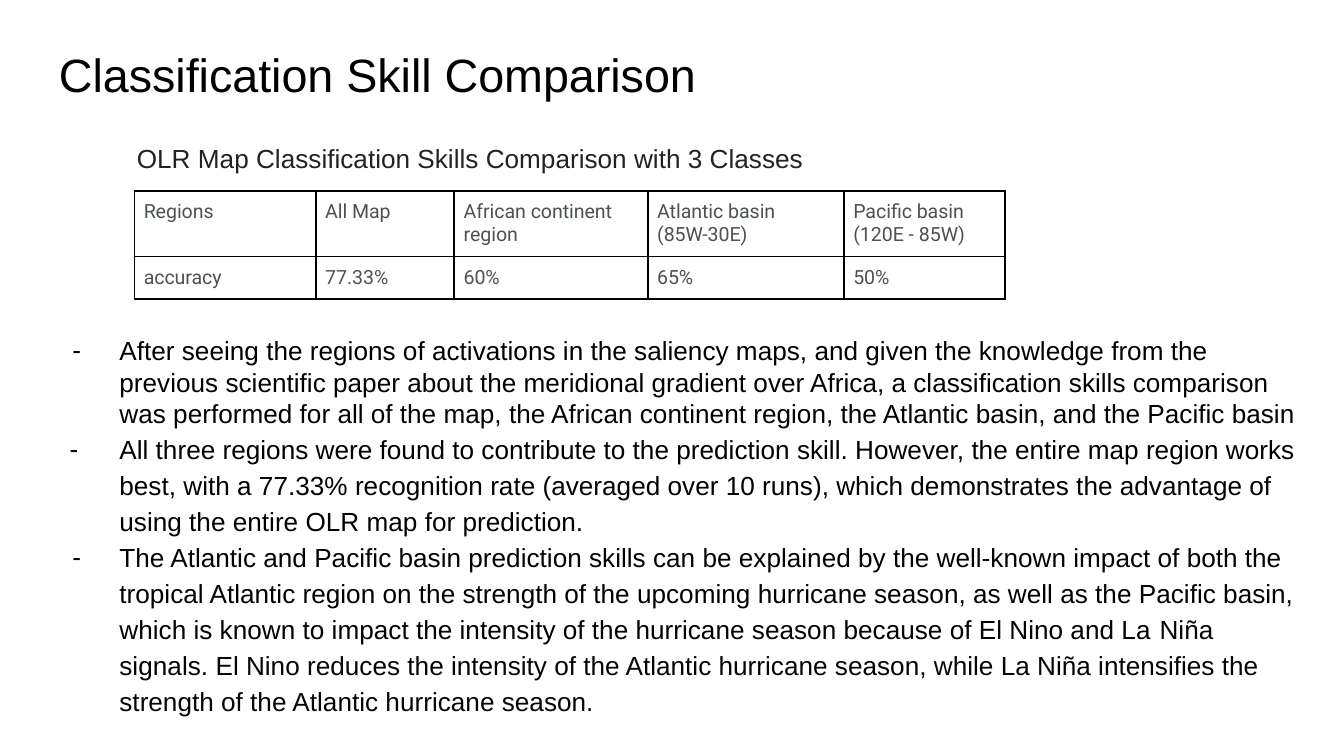
from lxml import etree
from pptx import Presentation
from pptx.dml.color import RGBColor
from pptx.enum import text
from pptx.oxml import ns
from pptx.util import Inches, Pt

BLACK = "000000"
DARK = "050505"


def color(code):
    return RGBColor.from_string(code)


def add_run(par, words, size, font, code):
    run = par.add_run()
    run.text = words
    run.font.size = Pt(size)
    run.font.name = font
    run.font.color.rgb = color(code)


def add_sub(node, tag, **attrs):
    return etree.SubElement(node, ns.qn(tag), **attrs)


def add_box(slide, left, top, width, height, base=0.1):
    box = slide.shapes.add_textbox(*map(Inches, (left, top, width, height)))
    frame = box.text_frame
    frame.word_wrap = True
    frame.margin_left = frame.margin_right = frame.margin_top = Inches(0.1)
    frame.margin_bottom = Inches(base)
    return frame


def add_bullet(par, hang):
    props = par._p.get_or_add_pPr()
    props.set("marL", str(Inches(0.5)))
    props.set("indent", str(-Inches(hang)))
    add_sub(add_sub(props, "a:buClr"), "a:srgbClr", val=BLACK)
    add_sub(props, "a:buFont", typeface="Arial")
    add_sub(props, "a:buChar", char="-")


def add_list(frame, items):
    for i, (hang, space, runs) in enumerate(items):
        par = frame.add_paragraph() if i else frame.paragraphs[0]
        par.line_spacing = space
        add_bullet(par, hang)
        for words, code in runs:
            add_run(par, words, 14, "Arial", code)


def style_cell(cell, words):
    cell.margin_left = cell.margin_right = Inches(0.07)
    cell.margin_top = cell.margin_bottom = Inches(0.07)
    props = cell._tc.get_or_add_tcPr()
    for side in "LRTB":
        line = add_sub(props, "a:ln" + side, w=str(Pt(1)))
        add_sub(add_sub(line, "a:solidFill"), "a:srgbClr", val=BLACK)
    cell.fill.background()
    frame = cell.text_frame
    for i, part in enumerate(words.split("\n")):
        par = frame.add_paragraph() if i else frame.paragraphs[0]
        add_run(par, part, 10.5, "Roboto", "4D5156")


def add_grid(slide, left, top, widths, heights, rows):
    size = map(Inches, (left, top, sum(widths), sum(heights)))
    table = slide.shapes.add_table(len(rows), len(widths), *size).table
    table.first_row = table.horz_banding = False
    for col, width in zip(table.columns, widths):
        col.width = Inches(width)
    for row, height, words in zip(table.rows, heights, rows):
        row.height = Inches(height)
        for cell, word in zip(row.cells, words):
            style_cell(cell, word)


def main():
    # Widescreen page, 16 to 9
    deck = Presentation()
    deck.slide_width, deck.slide_height = Inches(10), Inches(10 * 9 / 16)
    slide = deck.slides.add_slide(deck.slide_layouts[6])

    # Title
    frame = add_box(slide, 0.34, 0.24, 9.32, 0.63)
    add_run(frame.paragraphs[0], "Classification Skill Comparison",
            25, "Arial", BLACK)

    # Accuracy table
    add_grid(slide, 1, 1.42, [1.35, 1.03, 1.44, 1.46, 1.2], [0.48, 0.31], [
        ["Regions", "All Map", "African continent region",
         "Atlantic basin\n(85W-30E)", "Pacific basin\n(120E - 85W)"],
        ["accuracy", "77.33%", "60%", "65%", "50%"],
    ])

    # Table caption, raised above the middle by its bottom margin
    frame = add_box(slide, 0.92, 0.24, 6.06, 2.09, base=0.36)
    frame.vertical_anchor = text.MSO_ANCHOR.MIDDLE
    frame.paragraphs[0].line_spacing = 1.15
    add_run(frame.paragraphs[0],
            "OLR Map Classification Skills Comparison with 3 Classes",
            14, "Arial", "222222")

    # Findings: hanging indent, line spacing, runs
    frame = add_box(slide, 0.29, 2.39, 9.49, 3.1)
    frame.auto_size = text.MSO_AUTO_SIZE.SHAPE_TO_FIT_TEXT
    add_list(frame, [
        (0.35, 1.0, [
            ("After seeing the regions of activations in the saliency maps, "
             "and given the knowledge from the previous scientific paper "
             "about the meridional gradient over Africa, a classification "
             "skills comparison was performed for all of the map, the African "
             "continent region, the Atlantic basin, and the Pacific basin",
             BLACK)]),
        (0.37, 1.15, [
            ("All three regions were found to contribute to the prediction "
             "skill. However, the entire map region works best, with a 77.33% "
             "recognition rate (averaged over 10 runs), which demonstrates "
             "the advantage of using the entire OLR map for prediction.",
             BLACK)]),
        (0.35, 1.15, [
            ("The Atlantic and Pacific basin prediction skills can be "
             "explained by the well-known impact of both the tropical "
             "Atlantic region on the strength of the upcoming hurricane "
             "season, as well as the Pacific basin, which is known to impact "
             "the intensity of the hurricane season because of El Nino and "
             "La ", BLACK),
            ("Niña ", DARK),
            ("signals. ", BLACK),
            ("El Nino reduces the intensity of the Atlantic hurricane "
             "season, while La Niña intensifies the strength of the Atlantic "
             "hurricane season.", DARK)]),
    ])

    deck.save("out.pptx")


if __name__ == "__main__":
    main()
